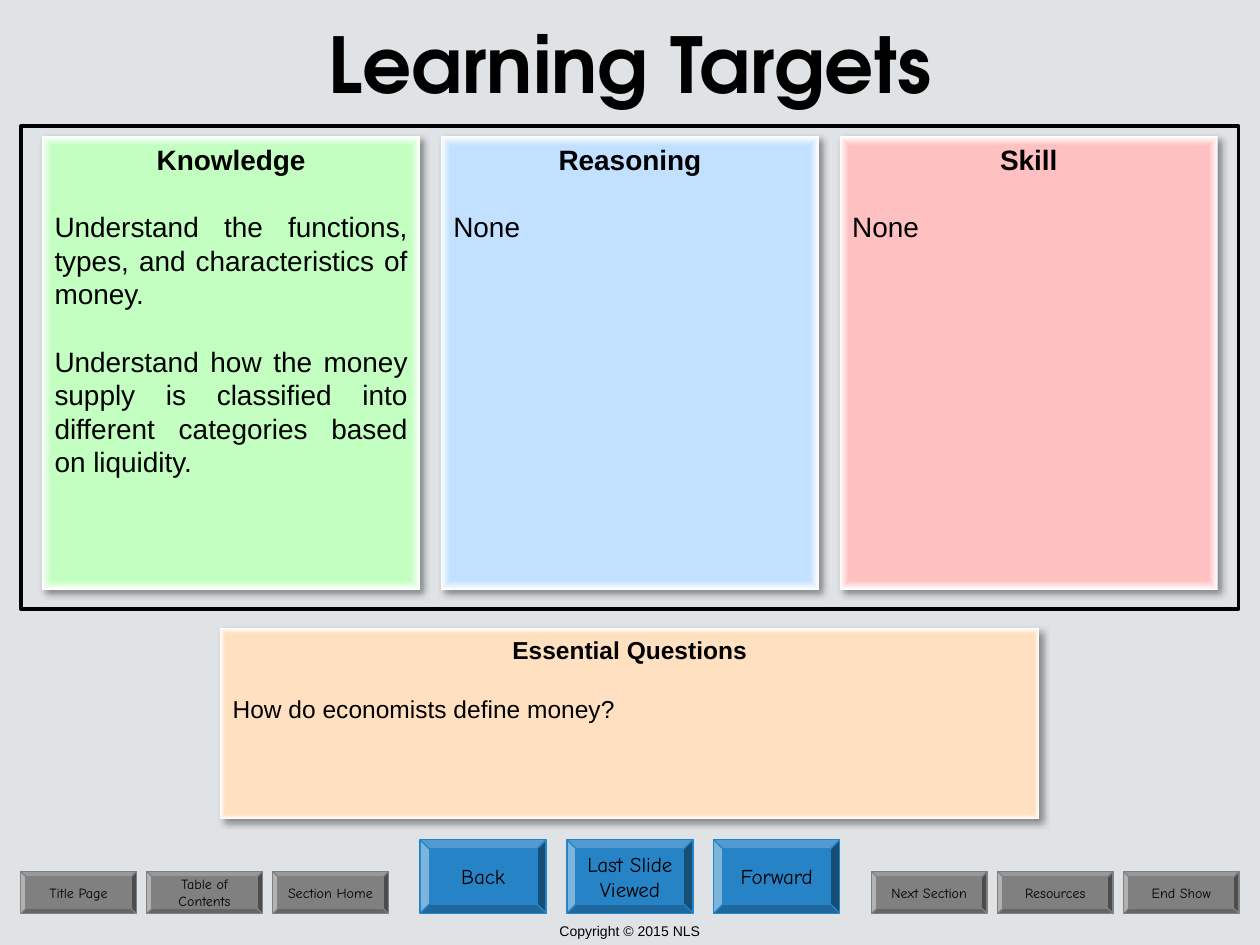
from lxml.etree import fromstring
from pptx import Presentation
from pptx.dml.color import RGBColor
from pptx.enum.shapes import MSO_SHAPE as Shape
from pptx.enum.text import MSO_ANCHOR as Anchor, PP_ALIGN as Align
from pptx.util import Cm, Pt

BLACK = RGBColor(0x00, 0x00, 0x00)
BACK = RGBColor(0xDF, 0xE3, 0xE5)
BLUE = RGBColor(0x26, 0x83, 0xC6)
GRAY = RGBColor(0x80, 0x80, 0x80)
GREEN = RGBColor(0xC3, 0xFF, 0xC1)
SKY = RGBColor(0xC2, 0xE0, 0xFF)
PINK = RGBColor(0xFE, 0xC0, 0xC1)
PEACH = RGBColor(0xFF, 0xE1, 0xC1)

NS = 'xmlns:a="http://schemas.openxmlformats.org/drawingml/2006/main"'
GLOW = """<a:gradFill {ns} rotWithShape="1"><a:gsLst>
<a:gs pos="0"><a:srgbClr val="{tint}"/></a:gs>
<a:gs pos="95000"><a:srgbClr val="{tint}"/></a:gs>
<a:gs pos="100000"><a:srgbClr val="FFFFFF"/></a:gs></a:gsLst>
<a:path path="shape"><a:fillToRect l="50000" t="50000" r="50000" b="50000"/></a:path>
</a:gradFill>"""
SHADE = f"""<a:outerShdw {NS} blurRad="50800" dist="38100" dir="2700000"
algn="tl" rotWithShape="0"><a:srgbClr val="000000"><a:alpha val="40000"/></a:srgbClr>
</a:outerShdw>"""

TITLE = {"name": "TeX Gyre Adventor", "size": Pt(44), "bold": True}
NOTE = {"name": "Arial", "size": Pt(8)}
LARGE = {"name": "Comic Neue", "size": Pt(12)}
SMALL = {"name": "Comic Neue", "size": Pt(8)}

TARGETS = [
    ("Knowledge", GREEN, [
        "Understand the functions, types, and characteristics of money.",
        "Understand how the money supply is classified into different "
        "categories based on liquidity."]),
    ("Reasoning", SKY, ["None"]),
    ("Skill", PINK, ["None"]),
]
LINKS = [
    (0.42, ["Title Page", "Table of\nContents", "Section Home"]),
    (17.57, ["Next Section", "Resources", "End Show"]),
]
MOVES = ["Back", "Last Slide\nViewed", "Forward"]


def style(item, form):
    for key, value in form.items():
        setattr(item, key, value)


def write(para, text, form, align=Align.CENTER):
    para.text = text
    para.alignment = align
    style(para.font, form)
    para.font.color.rgb = BLACK


def add_para(frame, index):
    return frame.paragraphs[0] if index == 0 else frame.add_paragraph()


def add_label(slide, area, text, form):
    frame = slide.shapes.add_textbox(*map(Cm, area)).text_frame
    style(frame, {"word_wrap": True, "vertical_anchor": Anchor.MIDDLE})
    write(frame.paragraphs[0], text, form)


def add_box(slide, kind, area):
    box = slide.shapes.add_shape(kind, *map(Cm, area))
    box.shadow.inherit = False
    return box


def add_frame(slide, area):
    box = add_box(slide, Shape.RECTANGLE, area)
    box.fill.background()
    box.line.color.rgb = BLACK
    box.line.width = Pt(2)


def add_key(slide, area, text, tint, form):
    key = add_box(slide, Shape.BEVEL, area)
    key.fill.solid()
    key.fill.fore_color.rgb = tint
    key.line.color.rgb = tint
    key.line.width = Pt(0.75)
    frame = key.text_frame
    style(frame, {"word_wrap": False, "vertical_anchor": Anchor.MIDDLE})
    for index, line in enumerate(text.split("\n")):
        write(add_para(frame, index), line, form)


def add_card(slide, area, head, tint, body, size):
    card = add_box(slide, Shape.RECTANGLE, area)
    card.line.fill.background()
    props = card.element.spPr
    props.prstGeom.addnext(fromstring(GLOW.format(ns=NS, tint=tint)))
    props[-1].append(fromstring(SHADE))
    frame = card.text_frame
    style(frame, {"word_wrap": True, "vertical_anchor": Anchor.TOP})
    step = Pt(1.2 * size)
    for index, text in enumerate([head, *body]):
        first = index == 0
        para = add_para(frame, index)
        write(para, text, {"name": "Arial", "size": Pt(size), "bold": first},
              Align.CENTER if first else Align.JUSTIFY)
        style(para, {"line_spacing": step, "space_before": 0 if first else step})


def main():
    deck = Presentation()
    style(deck, {"slide_width": Cm(25.4), "slide_height": Cm(19.05)})
    slide = deck.slides.add_slide(deck.slide_layouts[6])
    slide.background.fill.solid()
    slide.background.fill.fore_color.rgb = BACK

    add_label(slide, (0, 18.47, 25.4, 0.58), "Copyright © 2015 NLS", NOTE)
    for col, text in enumerate(MOVES):
        add_key(slide, (8.47 + 2.96 * col, 16.93, 2.54, 1.48), text, BLUE, LARGE)
    for left, names in LINKS:
        for col, text in enumerate(names):
            add_key(slide, (left + 2.54 * col, 17.57, 2.33, 0.85), text, GRAY, SMALL)

    add_label(slide, (0, 0, 25.4, 2.54), "Learning Targets", TITLE)
    add_frame(slide, (0.42, 2.54, 24.55, 9.74))
    for col, (head, tint, body) in enumerate(TARGETS):
        add_card(slide, (0.85 + 8.04 * col, 2.75, 7.62, 9.14), head, tint, body, 16)
    add_card(slide, (4.44, 12.67, 16.51, 3.84), "Essential Questions", PEACH,
             ["How do economists define money?"], 14)
    deck.save("out.pptx")


if __name__ == "__main__":
    main()
